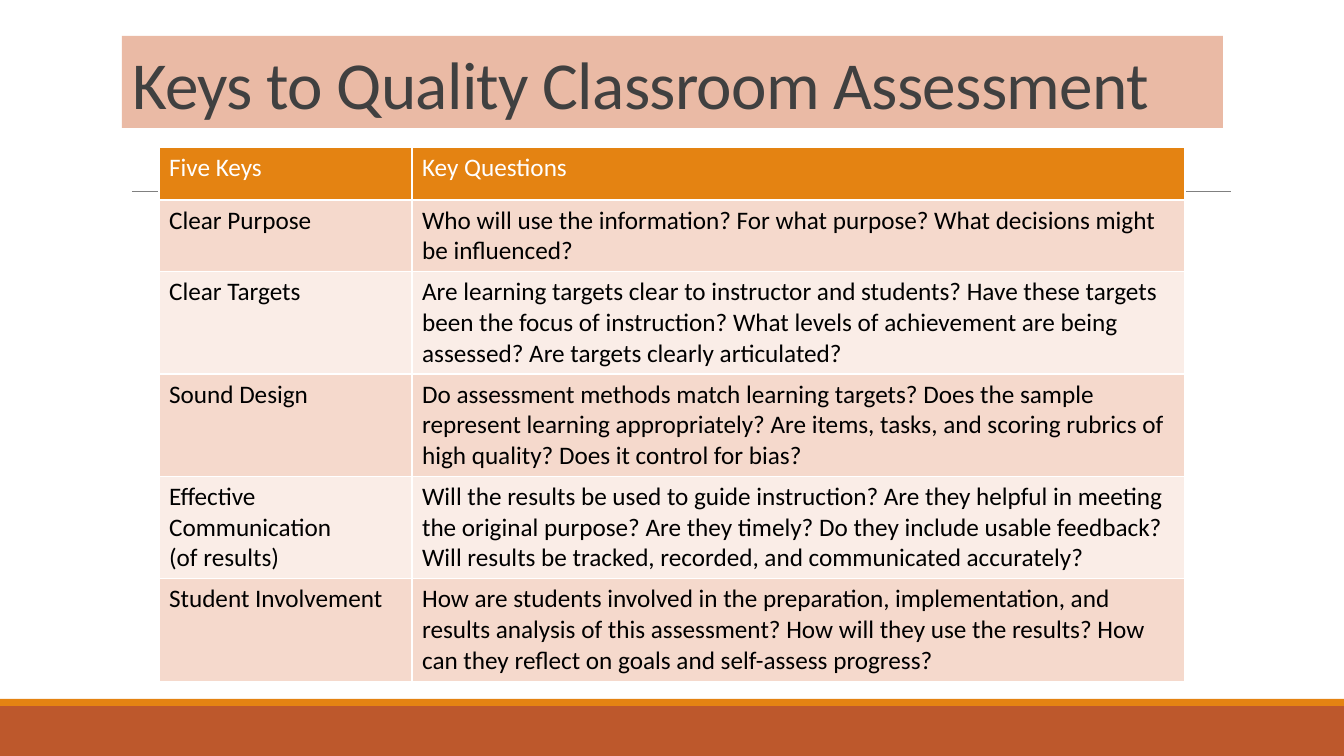
"""Build the slide on the five keys to quality classroom assessment."""
from dataclasses import dataclass

from lxml import etree
from pptx import Presentation
from pptx import util as u
from pptx.dml.color import RGBColor
from pptx.enum import shapes, text
from pptx.oxml.ns import qn

SLIDE_WIDTH, SLIDE_HEIGHT = 1344, 756
EMU_PER_PX = u.Inches(1) / 100.8
FONT = "Calibri"
ORANGE, RUST = "E48312", "BD582C"
BAND_FILLS = ("F5D9CC", "FAEDE7")
COLUMN_WIDTHS = (253, 773)
ROW_HEIGHTS = (53, 71, 102, 102, 102, 102)


@dataclass(frozen=True)
class Bar:
    top: int
    height: int
    fill: str


@dataclass(frozen=True)
class Key:
    name: str
    questions: str


BARS = (Bar(706, 50, RUST), Bar(699, 7, ORANGE))
HEADING = Key("Five Keys", "Key Questions")
KEYS = (
    Key("Clear Purpose",
        "Who will use the information? For what purpose? "
        "What decisions might be influenced?"),
    Key("Clear Targets",
        "Are learning targets clear to instructor and students? "
        "Have these targets been the focus of instruction? "
        "What levels of achievement are being assessed? "
        "Are targets clearly articulated?"),
    Key("Sound Design",
        "Do assessment methods match learning targets? "
        "Does the sample represent learning appropriately? "
        "Are items, tasks, and scoring rubrics of high quality? "
        "Does it control for bias?"),
    Key("Effective Communication\n(of results)",
        "Will the results be used to guide instruction? "
        "Are they helpful in meeting the original purpose? "
        "Are they timely? Do they include usable feedback? "
        "Will results be tracked, recorded, and communicated accurately?"),
    Key("Student Involvement",
        "How are students involved in the preparation, implementation, "
        "and results analysis of this assessment? "
        "How will they use the results? "
        "How can they reflect on goals and self-assess progress?"),
)


def px(length: float) -> u.Emu:
    return u.Emu(round(length * EMU_PER_PX))


def color(value: str) -> RGBColor:
    return RGBColor.from_string(value)


def paint(target, value: str) -> None:
    target.fill.solid()
    target.fill.fore_color.rgb = color(value)


def add_run(paragraph, content: str, size: int, value: str):
    run = paragraph.add_run()
    run.text = content
    run.font.name = FONT
    run.font.size = u.Pt(size)
    run.font.bold = False
    run.font.color.rgb = color(value)
    return run


def add_bar(slide, bar: Bar) -> None:
    shape = slide.shapes.add_shape(
        shapes.MSO_SHAPE.RECTANGLE, 0, px(bar.top), px(SLIDE_WIDTH), px(bar.height))
    shape.shadow.inherit = False
    paint(shape, bar.fill)
    shape.line.fill.background()


def add_rule(slide) -> None:
    rule = slide.shapes.add_connector(
        shapes.MSO_CONNECTOR.STRAIGHT, px(132), px(191), px(1231), px(191))
    rule.line.color.rgb = color("808080")
    rule.line.width = u.Pt(0.5)
    etree.SubElement(rule._element.spPr, qn("a:effectLst"))


def format_title(slide) -> None:
    title = slide.shapes.title
    title.left, title.top, title.width, title.height = map(px, (122, 36, 1101, 92))
    paint(title, "EABAA5")
    frame = title.text_frame
    frame.word_wrap = True
    frame.auto_size = text.MSO_AUTO_SIZE.NONE
    frame.vertical_anchor = text.MSO_ANCHOR.BOTTOM
    paragraph = frame.paragraphs[0]
    paragraph.alignment = text.PP_ALIGN.LEFT
    paragraph.line_spacing = 0.85
    run = add_run(paragraph, "Keys to Quality Classroom Assessment", 48, "404040")
    run.font._element.set("spc", "-50")


def fill_cell(cell, content: str, fill: str, value: str) -> None:
    paint(cell, fill)
    frame = cell.text_frame
    for index, line in enumerate(content.split("\n")):
        paragraph = frame.add_paragraph() if index else frame.paragraphs[0]
        add_run(paragraph, line, 18, value)


def add_keys_table(slide) -> None:
    table = slide.shapes.add_table(
        len(ROW_HEIGHTS), len(COLUMN_WIDTHS), px(159), px(147),
        px(sum(COLUMN_WIDTHS)), px(sum(ROW_HEIGHTS))).table
    for column, width in zip(table.columns, COLUMN_WIDTHS):
        column.width = px(width)
    for index, (row, height, key) in enumerate(
            zip(table.rows, ROW_HEIGHTS, (HEADING, *KEYS))):
        row.height = px(height)
        fill = BAND_FILLS[(index - 1) % 2] if index else ORANGE
        value = "000000" if index else "FFFFFF"
        for cell, content in zip(row.cells, (key.name, key.questions)):
            fill_cell(cell, content, fill, value)


def main() -> None:
    presentation = Presentation()
    presentation.slide_width = px(SLIDE_WIDTH)
    presentation.slide_height = px(SLIDE_HEIGHT)
    slide = presentation.slides.add_slide(presentation.slide_layouts[5])
    for bar in BARS:
        add_bar(slide, bar)
    add_rule(slide)
    format_title(slide)
    add_keys_table(slide)
    presentation.save("out.pptx")


if __name__ == "__main__":
    main()
